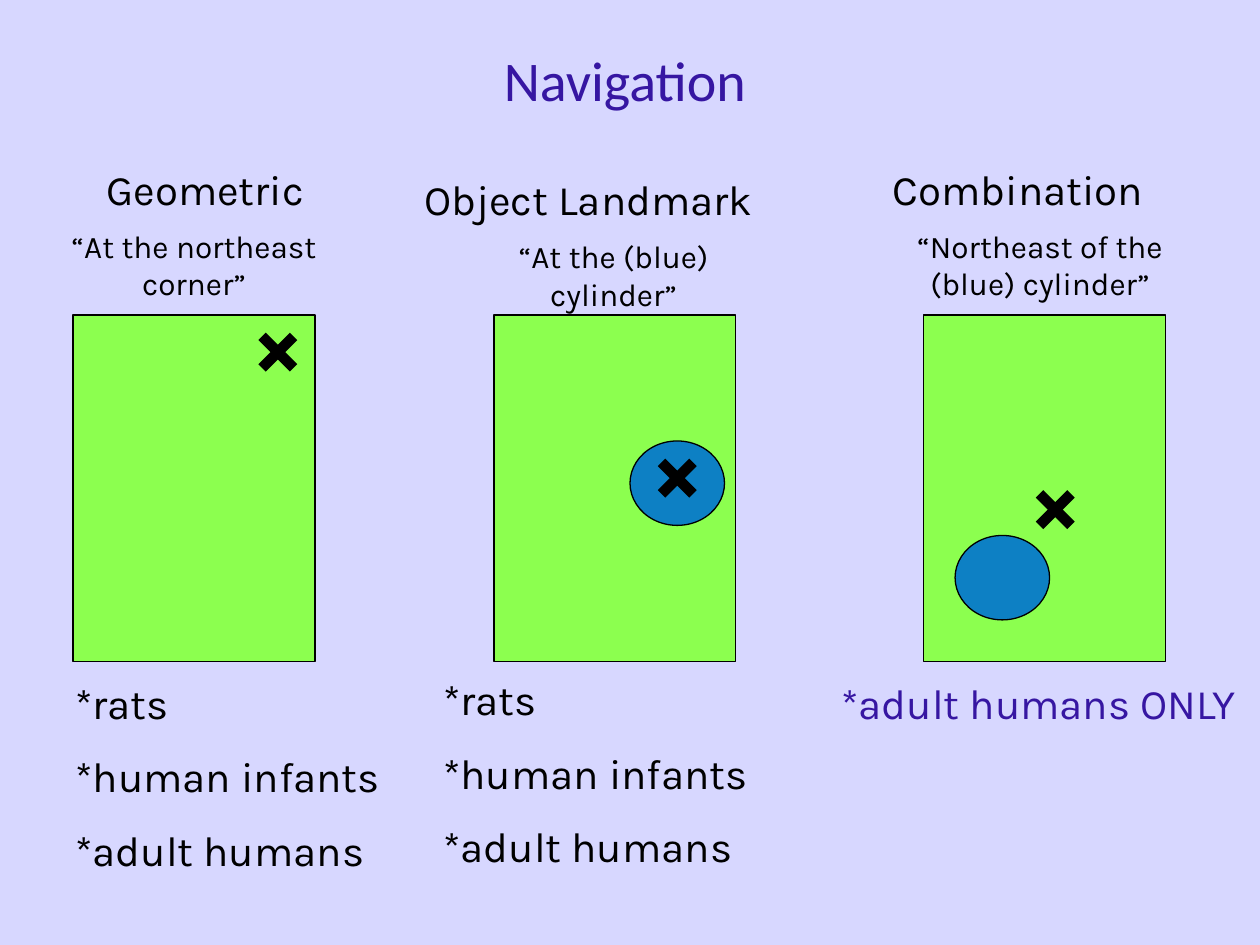
"""Build a slide comparing three ways of navigating a room."""
import pptx
import pptx.util
import pptx.dml.color
import pptx.enum.shapes
import pptx.enum.text
import lxml.etree

Inches, Pt = pptx.util.Inches, pptx.util.Pt
Rgb = pptx.dml.color.RGBColor.from_string
Align = pptx.enum.text.PP_ALIGN
Kind = pptx.enum.shapes.MSO_SHAPE
HUES = {"back": "D7D7FF", "title": "3616A2", "room": "8CFF4F", "blue": "0D80C4", "ink": "000000"}

deck = pptx.Presentation()
deck.slide_width, deck.slide_height = Inches(10), Inches(7.5)
slide = deck.slides.add_slide(deck.slide_layouts[6])
slide.background.fill.solid()
slide.background.fill.fore_color.rgb = Rgb(HUES["back"])


def write(lines, spot, size, hue="ink", align=Align.CENTER, font="Karla"):
    box = slide.shapes.add_textbox(*map(Inches, spot))
    frame = box.text_frame
    frame.word_wrap = True
    frame.text = "\n".join(lines)
    for i, para in enumerate(frame.paragraphs):
        para.alignment = align
        para.space_before = Pt(13 if i else 0)
        face = para.runs[0].font
        face.name, face.size = font, Pt(size)
        face.color.rgb = Rgb(HUES[hue])
    return frame


def draw(kind, spot, hue):
    shape = slide.shapes.add_shape(kind, *map(Inches, spot))
    shape.shadow.inherit = False
    shape.fill.solid()
    shape.fill.fore_color.rgb = Rgb(HUES[hue])
    shape.line.color.rgb = Rgb(HUES["ink"])
    shape.line.width = Pt(0.75)


title = write(["Navigation"], (1.25, 0, 7.42, 1.25), 32, "title", font="Calibri")
title.vertical_anchor = pptx.enum.text.MSO_ANCHOR.MIDDLE

groups = ["*rats", "*human infants", "*adult humans"]
columns = [
    {"room": 0.58, "disc": None, "mark": (2.08, 2.67),
     "head": ("Geometric", (0.42, 1.25, 2.42, 0.5)),
     "quote": ("“At the northeast corner”", (0.33, 1.75, 2.42, 0.7)),
     "who": (groups, (0.5, 5.33, 3.25, 1.7), "ink")},
    {"room": 3.92, "disc": (5, 3.5), "mark": (5.25, 3.67),
     "head": ("Object Landmark", (2.92, 1.33, 3.5, 0.5)),
     "quote": ("“At the (blue) cylinder”", (3.83, 1.83, 2.08, 0.7)),
     "who": (groups, (3.42, 5.3, 3.58, 1.7), "ink")},
    {"room": 7.33, "disc": (7.58, 4.25), "mark": (8.25, 3.92),
     "head": ("Combination", (6.33, 1.25, 3.5, 0.5)),
     "quote": ("“Northeast of the (blue) cylinder”", (7.17, 1.75, 2.17, 0.7)),
     "who": (["*adult humans ONLY"], (6.58, 5.33, 3.42, 0.5), "title")},
]

for col in columns:
    draw(Kind.RECTANGLE, (col["room"], 2.5, 1.92, 2.75), "room")
    if col["disc"]:
        draw(Kind.OVAL, (*col["disc"], 0.75, 0.67), "blue")

    x, y = col["mark"]
    for start, end in ((y, y + 0.25), (y + 0.25, y)):
        ends = map(Inches, (x, start, x + 0.25, end))
        bar = slide.shapes.add_connector(pptx.enum.shapes.MSO_CONNECTOR.STRAIGHT, *ends)
        bar.line.color.rgb = Rgb(HUES["ink"])
        bar.line.width = Pt(6)
        lxml.etree.SubElement(bar._element.spPr, pptx.oxml.ns.qn("a:effectLst"))

    for key, size in (("head", 24), ("quote", 18)):
        text, spot = col[key]
        write([text], spot, size)
    lines, spot, hue = col["who"]
    write(lines, spot, 24, hue, Align.LEFT)

deck.save("out.pptx")
